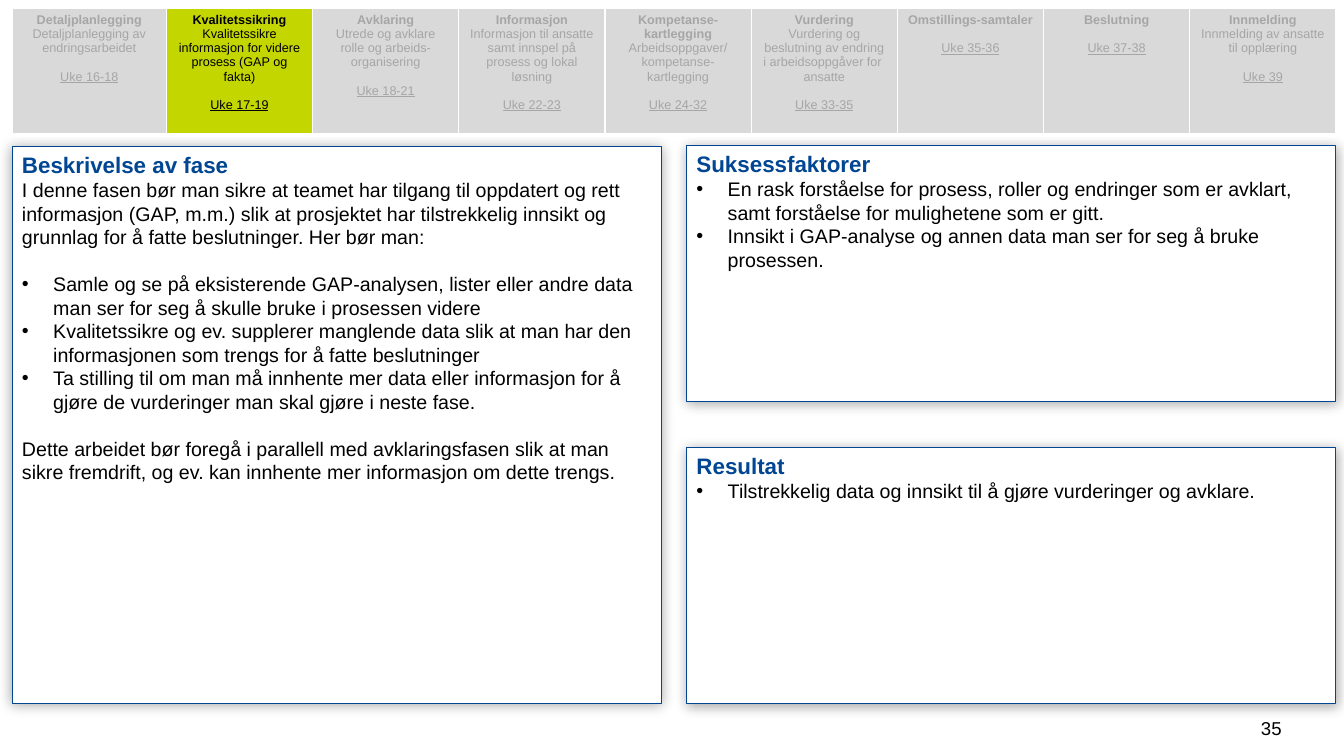
from lxml.etree import SubElement
from pptx import Presentation
from pptx.dml.color import RGBColor
from pptx.enum.shapes import MSO_SHAPE
from pptx.enum.text import MSO_ANCHOR, PP_ALIGN
from pptx.oxml import parse_xml
from pptx.oxml.ns import nsdecls, qn
from pptx.util import Inches, Pt

BLUE = RGBColor(0x01, 0x46, 0x93)
LIME = RGBColor(0xC4, 0xD6, 0x00)
PALE = RGBColor(0xD9, 0xD9, 0xD9)
GREY = RGBColor(0xA6, 0xA6, 0xA6)
BLACK = RGBColor(0, 0, 0)
WHITE = RGBColor(255, 255, 255)

PHASES = [
    ("Detaljplanlegging", "Detaljplanlegging av endringsarbeidet", "Uke 16-18"),
    ("Kvalitetssikring", "Kvalitetssikre informasjon for videre prosess (GAP og fakta)",
     "Uke 17-19"),
    ("Avklaring", "Utrede og avklare rolle og arbeids-organisering", "Uke 18-21"),
    ("Informasjon", "Informasjon til ansatte samt innspel på prosess og lokal løsning",
     "Uke 22-23"),
    ("Kompetanse-kartlegging", "Arbeidsoppgaver/\vkompetanse-kartlegging", "Uke 24-32"),
    ("Vurdering", "Vurdering og beslutning av endring i arbeidsoppgåver for \vansatte",
     "Uke 33-35"),
    ("Omstillings-samtaler", "", "Uke 35-36"),
    ("Beslutning", "", "Uke 37-38"),
    ("Innmelding", "Innmelding av ansatte til opplæring", "Uke 39"),
]
ACTIVE = 1

INTRO = ("I denne fasen bør man sikre at teamet har tilgang til oppdatert og rett "
         "informasjon (GAP, m.m.) slik at prosjektet har tilstrekkelig innsikt og "
         "grunnlag for å fatte beslutninger. Her bør man:")
STEPS = [
    "Samle og se på eksisterende GAP-analysen, lister eller andre data man ser for seg "
    "å skulle bruke i prosessen videre",
    "Kvalitetssikre og ev. supplerer manglende data slik at man har den informasjonen "
    "som trengs for å fatte beslutninger",
    "Ta stilling til om man må innhente mer data eller informasjon for å gjøre de "
    "vurderinger man skal gjøre i neste fase.",
]
CLOSING = ("Dette arbeidet bør foregå i parallell med avklaringsfasen slik at man sikre "
           "fremdrift, og ev. kan innhente mer informasjon om dette trengs.")
FACTORS = [
    "En rask forståelse for prosess, roller og endringer som er avklart, samt forståelse "
    "for mulighetene som er gitt.",
    "Innsikt i GAP-analyse og annen data man ser for seg å bruke prosessen.",
]
RESULTS = ["Tilstrekkelig data og innsikt til å gjøre vurderinger og avklare."]


def put(frame, text, size=14, color=BLACK, bold=False, under=False,
        align=PP_ALIGN.LEFT, bullet=False, before=0):
    """Add a paragraph, using the empty first one if it is free."""
    para = frame.paragraphs[0]
    if para.text:
        para = frame.add_paragraph()
    para.text = text
    para.alignment = align
    if before:
        para.space_before = Pt(before)
    if bullet:
        props = para._p.get_or_add_pPr()
        props.set("marL", str(Inches(0.31)))
        props.set("indent", str(-Inches(0.31)))
        SubElement(props, qn("a:buFont")).set("typeface", "Arial")
        SubElement(props, qn("a:buChar")).set("char", "•")
    for run in para.runs:
        font = run.font
        font.name, font.size, font.bold = "Arial", Pt(size), bold
        font.underline = under
        font.color.rgb = color


def edge(cell):
    """Give a cell white borders, the lower one thicker."""
    props = cell._tc.get_or_add_tcPr()
    for spot, (side, width) in enumerate((("L", 1), ("R", 1), ("T", 1), ("B", 3))):
        props.insert(spot, parse_xml(
            f'<a:ln{side} {nsdecls("a")} w="{Pt(width)}"><a:solidFill>'
            f'<a:srgbClr val="{WHITE}"/></a:solidFill></a:ln{side}>'))


def phase_bar(slide, left, top, width, height):
    grid = slide.shapes.add_table(1, len(PHASES), Inches(left), Inches(top),
                                  Inches(width), Inches(height)).table
    grid.rows[0].height = Inches(height)
    step = 1.45
    for num, (title, body, week) in enumerate(PHASES):
        first = width - step * (len(PHASES) - 1)
        grid.columns[num].width = Inches(step if num else first)
        cell = grid.cell(0, num)
        cell.fill.solid()
        cell.fill.fore_color.rgb = LIME if num == ACTIVE else PALE
        edge(cell)
        look = dict(size=9, align=PP_ALIGN.CENTER,
                    color=BLACK if num == ACTIVE else GREY)
        put(cell.text_frame, title, bold=True, **look)
        if body:
            put(cell.text_frame, body, **look)
        put(cell.text_frame, week, under=True, before=10.2, **look)


def panel(slide, left, top, width, height, title):
    """Draw a framed box with its heading and return its text frame."""
    box = slide.shapes.add_shape(MSO_SHAPE.RECTANGLE, Inches(left), Inches(top),
                                 Inches(width), Inches(height))
    box.fill.solid()
    box.fill.fore_color.rgb = WHITE
    box.line.color.rgb = BLUE
    box.line.width = Pt(0.75)
    box._element.spPr.append(parse_xml(
        f'<a:effectLst {nsdecls("a")}><a:outerShdw blurRad="{Pt(9)}" dist="{Pt(1)}" '
        'dir="5400000" rotWithShape="0"><a:srgbClr val="000000">'
        '<a:alpha val="35000"/></a:srgbClr></a:outerShdw></a:effectLst>'))
    frame = box.text_frame
    frame.word_wrap = True
    frame.vertical_anchor = MSO_ANCHOR.TOP
    put(frame, title, size=16, color=BLUE, bold=True)
    return frame


def bullets(frame, items, before=0):
    for num, item in enumerate(items):
        put(frame, item, bullet=True, before=0 if num else before)


def page_number(slide, left, top, width, height):
    box = slide.shapes.add_textbox(Inches(left), Inches(top),
                                   Inches(width), Inches(height))
    frame = box.text_frame
    frame.word_wrap = True
    frame.vertical_anchor = MSO_ANCHOR.MIDDLE
    put(frame, "35", size=13.3, align=PP_ALIGN.CENTER)


def main():
    deck = Presentation()
    deck.slide_width, deck.slide_height = Inches(13.33), Inches(7.5)
    slide = deck.slides.add_slide(deck.slide_layouts[6])
    page_number(slide, 12.36, 7.02, 0.5, 0.4)
    phase = panel(slide, 0.12, 1.45, 6.44, 5.53, "Beskrivelse av fase")
    put(phase, INTRO)
    bullets(phase, STEPS, before=16.8)
    put(phase, CLOSING, before=16.8)
    bullets(panel(slide, 6.81, 1.44, 6.44, 2.54, "Suksessfaktorer"), FACTORS)
    bullets(panel(slide, 6.81, 4.44, 6.44, 2.54, "Resultat"), RESULTS)
    phase_bar(slide, 0.12, 0.08, 13.13, 1.26)
    deck.save("out.pptx")


if __name__ == "__main__":
    main()
